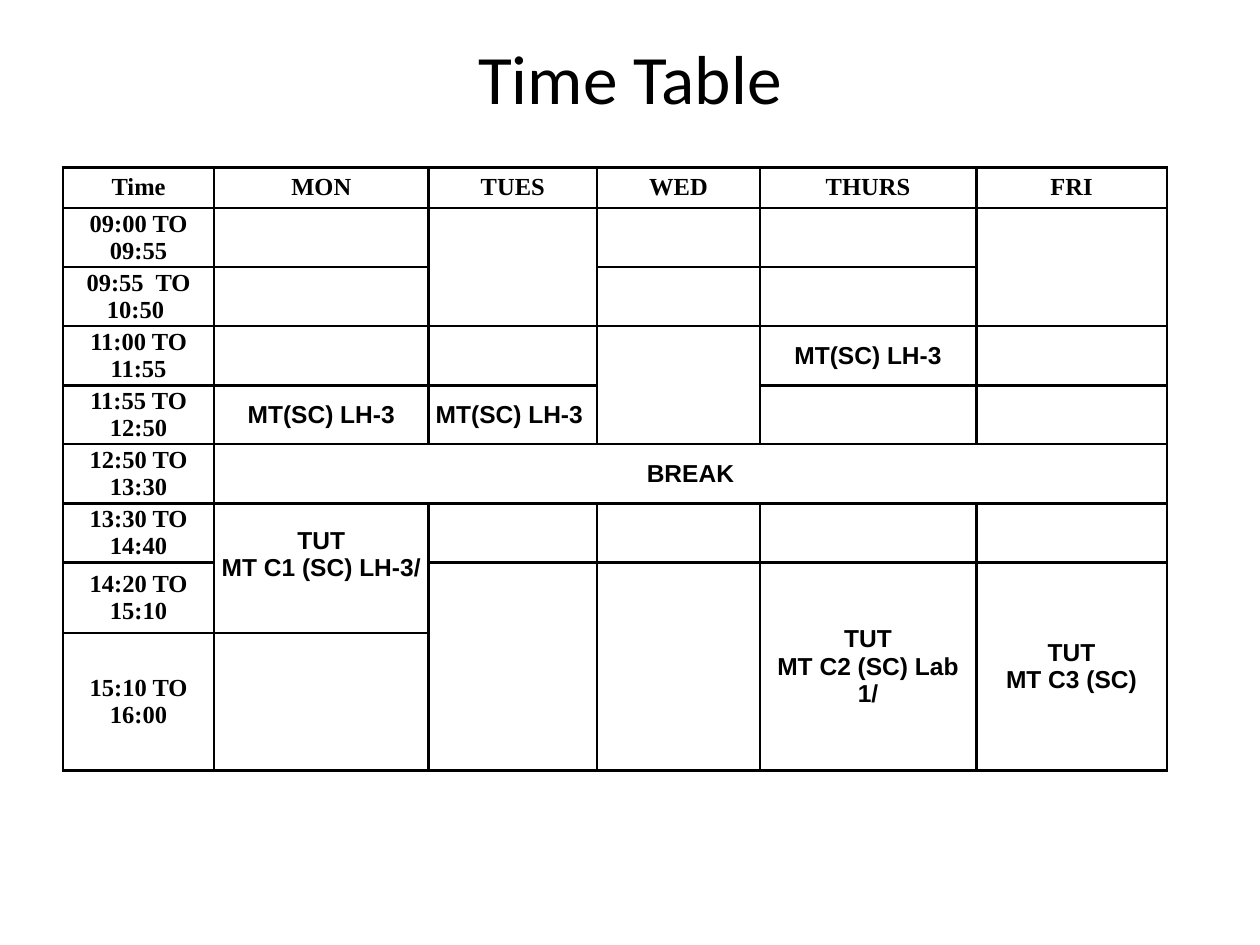
"""Build a one-slide weekly time table."""
from lxml.etree import SubElement
from pptx import Presentation
from pptx.dml.color import RGBColor
from pptx.enum.text import MSO_ANCHOR as Anchor, PP_ALIGN as Align
from pptx.oxml.ns import qn
from pptx.util import Inches, Pt

BLACK = RGBColor(0, 0, 0)
COLUMN_WIDTHS = [1.2, 1.7, 1.34, 1.29, 1.72, 1.51]
ROW_HEIGHTS = [0.32, 0.47, 0.47, 0.47, 0.41, 0.47, 0.47, 0.56, 1.09]
DAYS = ["Time", "MON", "TUES", "WED", "THURS", "FRI"]
TIMES = [
    "09:00 TO 09:55", "09:55  TO 10:50 ", "11:00 TO 11:55", "11:55 TO 12:50",
    "12:50 TO 13:30", "13:30 TO 14:40", "14:20 TO 15:10", "15:10 TO 16:00",
]
LESSONS = {
    (3, 4): ["MT(SC) LH-3"],
    (4, 1): ["MT(SC) LH-3"],
    (4, 2): ["MT(SC) LH-3 "],
    (5, 1): ["BREAK"],
    (6, 1): ["TUT", "MT C1 (SC) LH-3/"],
    (7, 4): ["TUT", "MT C2 (SC) Lab 1/"],
    (7, 5): ["TUT", "MT C3 (SC)"],
}
DOUBLE_PERIODS = [(1, 2), (1, 5), (3, 3), (6, 1), (7, 2), (7, 3), (7, 4), (7, 5)]


def write_lines(text_frame, lines, font_name, size, bold):
    for index, line in enumerate(lines):
        paragraph = text_frame.paragraphs[0] if index == 0 else text_frame.add_paragraph()
        paragraph.alignment = Align.CENTER
        run = paragraph.add_run()
        run.text = line
        run.font.name = font_name
        run.font.size = Pt(size)
        run.font.bold = bold
        run.font.color.rgb = BLACK


def style_cell(cell):
    cell.margin_left = cell.margin_right = Inches(0.05)
    cell.margin_top = cell.margin_bottom = 0
    cell.vertical_anchor = Anchor.MIDDLE
    properties = cell._tc.get_or_add_tcPr()
    for side in ("a:lnL", "a:lnR", "a:lnT", "a:lnB"):
        border = SubElement(properties, qn(side), w=str(Pt(1.5)))
        fill = SubElement(border, qn("a:solidFill"))
        SubElement(fill, qn("a:srgbClr"), val=str(BLACK))
    cell.fill.background()


presentation = Presentation()
presentation.slide_width = Inches(10)
presentation.slide_height = Inches(7.5)
slide = presentation.slides.add_slide(presentation.slide_layouts[6])

title = slide.shapes.add_textbox(Inches(0.5), Inches(0.3), Inches(9), Inches(0.62))
title.text_frame.word_wrap = True
title.text_frame.vertical_anchor = Anchor.MIDDLE
write_lines(title.text_frame, ["Time Table"], "Calibri", 39.6, False)

table_frame = slide.shapes.add_table(
    len(ROW_HEIGHTS), len(COLUMN_WIDTHS),
    Inches(0.5), Inches(1.33), Inches(sum(COLUMN_WIDTHS)), Inches(sum(ROW_HEIGHTS)),
)
table = table_frame.table
table.first_row = False
table.horz_banding = False
for column, width in zip(table.columns, COLUMN_WIDTHS):
    column.width = Inches(width)
for row, height in zip(table.rows, ROW_HEIGHTS):
    row.height = Inches(height)
for cell in table.iter_cells():
    style_cell(cell)

for row, column in DOUBLE_PERIODS:
    table.cell(row, column).merge(table.cell(row + 1, column))
table.cell(5, 1).merge(table.cell(5, 5))

for column, day in enumerate(DAYS):
    write_lines(table.cell(0, column).text_frame, [day], "Times New Roman", 14, True)
for row, time in enumerate(TIMES, start=1):
    write_lines(table.cell(row, 0).text_frame, [time], "Times New Roman", 14, True)
for (row, column), lines in LESSONS.items():
    write_lines(table.cell(row, column).text_frame, lines, "Arial", 14, True)
table.cell(6, 1).margin_bottom = Inches(0.22)

presentation.save("out.pptx")
